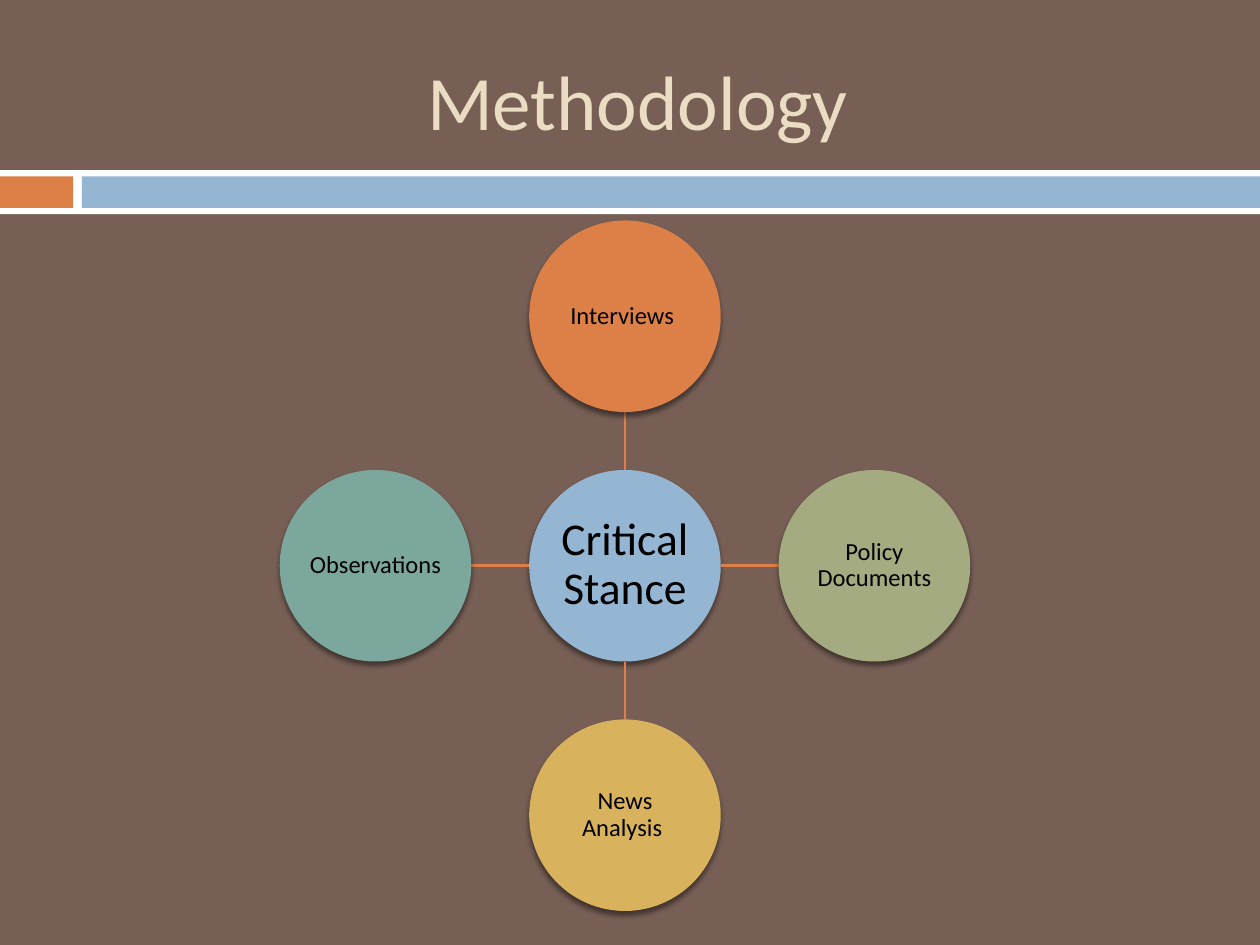
from dataclasses import dataclass

from lxml import etree
from pptx import Presentation
from pptx.dml.color import RGBColor
from pptx.enum.shapes import MSO_CONNECTOR, MSO_SHAPE
from pptx.enum.text import MSO_ANCHOR, PP_ALIGN
from pptx.oxml.ns import qn
from pptx.util import Inches, Pt

RECTANGLE = MSO_SHAPE.RECTANGLE
ELLIPSE = MSO_SHAPE.OVAL
STRAIGHT = MSO_CONNECTOR.STRAIGHT
MIDDLE = MSO_ANCHOR.MIDDLE
CENTER = PP_ALIGN.CENTER

FONT = "Calibri"
COLORS = {
    "background": "775F55",
    "title": "EBDDC3",
    "text": "000000",
    "white": "FFFFFF",
    "orange": "DD8047",
    "blue": "94B6D2",
    "olive": "A5AB81",
    "gold": "D8B25C",
    "teal": "7BA79D",
}

HUB_X, HUB_Y = 4.96, 4.49
DIAMETER = 1.52
RADIUS = DIAMETER / 2
ORBIT = 1.98


@dataclass(frozen=True)
class Band:
    left: float
    top: float
    width: float
    height: float
    color: str


@dataclass(frozen=True)
class Method:
    """A method circle; dx and dy give its direction from the hub."""
    label: str
    color: str
    dx: int
    dy: int


BANDS = [
    Band(0, 1.35, 10, 0.35, "white"),
    Band(0, 1.4, 0.58, 0.25, "orange"),
    Band(0.65, 1.4, 9.35, 0.25, "blue"),
]
METHODS = [
    Method("Interviews ", "orange", 0, -1),
    Method("Policy Documents", "olive", 1, 0),
    Method("News Analysis ", "gold", 0, 1),
    Method("Observations ", "teal", -1, 0),
]


def rgb(name: str) -> RGBColor:
    return RGBColor.from_string(COLORS[name])


def write_text(frame, text: str, size: float, color: str) -> None:
    frame.word_wrap = True
    frame.vertical_anchor = MIDDLE
    frame.text = text
    paragraph = frame.paragraphs[0]
    paragraph.alignment = CENTER
    font = paragraph.runs[0].font
    font.name, font.size = FONT, Pt(size)
    font.color.rgb = rgb(color)


def add_filled(slide, kind, left: float, top: float, width: float, height: float, color: str):
    shape = slide.shapes.add_shape(
        kind, Inches(left), Inches(top), Inches(width), Inches(height))
    shape.shadow.inherit = False
    shape.fill.solid()
    shape.fill.fore_color.rgb = rgb(color)
    shape.line.fill.background()
    return shape


def add_drop_shadow(shape) -> None:
    effects = shape._element.spPr.find(qn("a:effectLst"))
    shadow = etree.SubElement(
        effects, qn("a:outerShdw"), blurRad=str(Pt(3)), dist=str(Pt(2.4)),
        dir="5400000", rotWithShape="0")
    black = etree.SubElement(shadow, qn("a:srgbClr"), val=COLORS["text"])
    etree.SubElement(black, qn("a:alpha"), val="45000")


def add_circle(slide, x: float, y: float, label: str, color: str,
               size: float, inset: float) -> None:
    """Draw a labelled circle centred on x, y."""
    circle = add_filled(slide, ELLIPSE, x - RADIUS, y - RADIUS, DIAMETER, DIAMETER, color)
    add_drop_shadow(circle)
    frame = circle.text_frame
    frame.margin_left = frame.margin_right = Inches(inset)
    frame.margin_top = frame.margin_bottom = Inches(inset)
    write_text(frame, label, size, "text")
    frame.paragraphs[0].line_spacing = 0.9


def add_spoke(slide, method: Method) -> None:
    """Draw the line from the hub's edge to the method's edge."""
    near, far = RADIUS, ORBIT - RADIUS
    spoke = slide.shapes.add_connector(
        STRAIGHT,
        Inches(HUB_X + near * method.dx), Inches(HUB_Y + near * method.dy),
        Inches(HUB_X + far * method.dx), Inches(HUB_Y + far * method.dy))
    spoke.line.color.rgb = rgb("orange")
    spoke.line.width = Pt(1.5)
    etree.SubElement(spoke._element.spPr, qn("a:effectLst"))


def main() -> None:
    deck = Presentation()
    deck.slide_width, deck.slide_height = Inches(10), Inches(7.5)
    slide = deck.slides.add_slide(deck.slide_layouts[6])
    slide.background.fill.solid()
    slide.background.fill.fore_color.rgb = rgb("background")

    for band in BANDS:
        add_filled(slide, RECTANGLE, band.left, band.top, band.width, band.height, band.color)

    title = slide.shapes.add_textbox(Inches(0.67), Inches(0.25), Inches(8.92), Inches(1.08))
    write_text(title.text_frame, "Methodology ", 44, "title")

    add_circle(slide, HUB_X, HUB_Y, "Critical Stance ", "blue", 26, 0.02)
    for method in METHODS:
        add_spoke(slide, method)
        add_circle(slide, HUB_X + ORBIT * method.dx, HUB_Y + ORBIT * method.dy,
                   method.label, method.color, 14, 0.01)

    deck.save("out.pptx")


if __name__ == "__main__":
    main()
